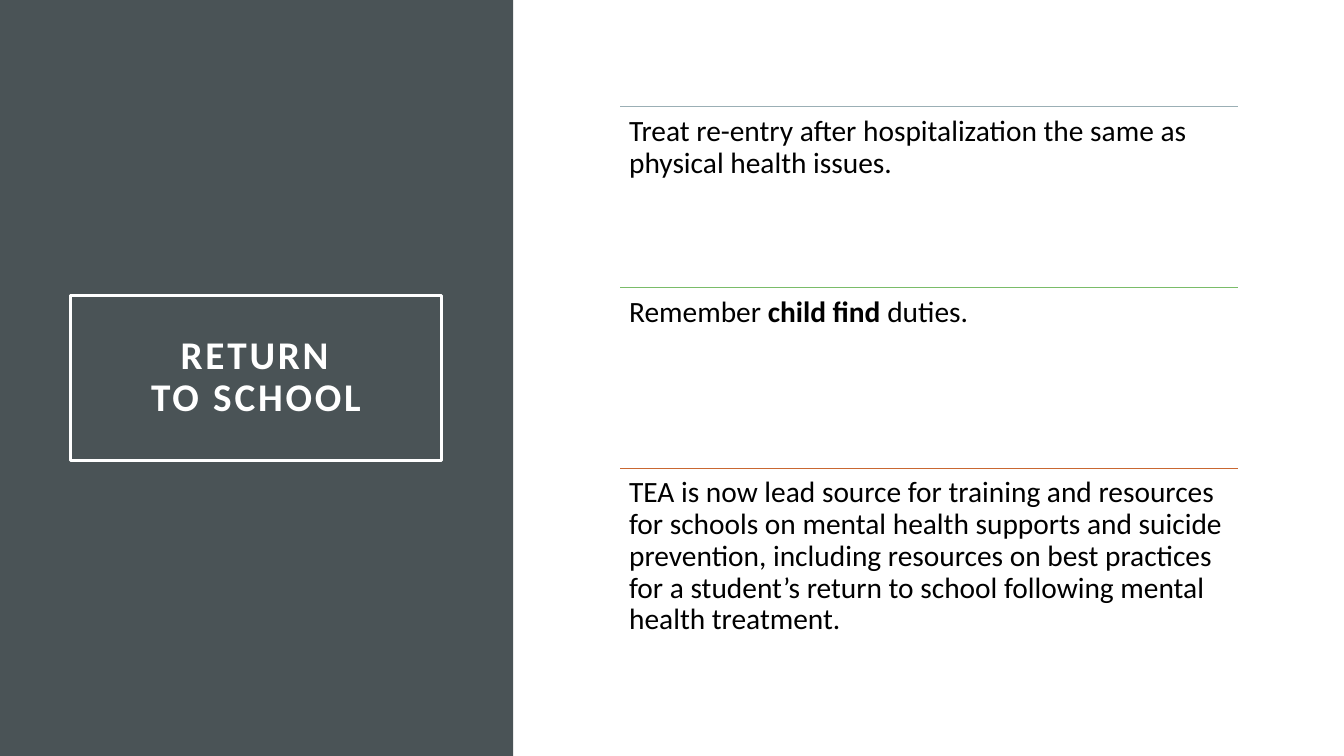
from pptx import Presentation
from pptx.dml.color import RGBColor
from pptx.enum.shapes import MSO_CONNECTOR as Connector, MSO_SHAPE as Shape
from pptx.enum.text import MSO_ANCHOR as Anchor, MSO_AUTO_SIZE as AutoSize, PP_ALIGN as Align
from pptx.oxml.ns import qn
from pptx.util import Inches, Pt
from lxml.etree import SubElement

COLORS = {
    "panel": "4A5356",
    "white": "FFFFFF",
    "text": "000000",
    "rules": ["9BAFB5", "7ABC69", "C96731"],
}
TITLE = "RETURN\vTO SCHOOL"
# Each point is a list of (words, bold) spans
POINTS = [
    [("Treat re-entry after hospitalization the same as physical health issues.", False)],
    [("Remember ", False), ("child find ", True), ("duties.", False)],
    [("TEA is now lead source for training and resources for schools on mental "
      "health supports and suicide prevention, including resources on best "
      "practices for a student’s return to school following mental health "
      "treatment.", False)],
]


def rgb(value):
    return RGBColor.from_string(value)


def set_font(font, color, **values):
    for name, value in {"name": "Calibri", **values}.items():
        setattr(font, name, value)
    font.color.rgb = rgb(color)


def set_frame(frame, margin, anchor):
    values = {"word_wrap": True, "auto_size": AutoSize.NONE, "vertical_anchor": anchor}
    for side in ("left", "top", "right", "bottom"):
        values[f"margin_{side}"] = Inches(margin)
    for name, value in values.items():
        setattr(frame, name, value)


def add_title_panel(page, left, top, width, height):
    # Dark panel
    panel = page.shapes.add_shape(
        Shape.RECTANGLE, Inches(left), Inches(top), Inches(width), Inches(height))
    panel.shadow.inherit = False
    panel.fill.solid()
    panel.fill.fore_color.rgb = rgb(COLORS["panel"])
    panel.line.fill.background()

    # Framed title, brought in front of the panel
    title = page.shapes.title
    panel.element.addnext(title.element)
    title.left, title.top = Inches(left + 0.7), Inches(top + 2.93)
    title.width, title.height = Inches(3.68), Inches(1.64)
    title.line.color.rgb = rgb(COLORS["white"])
    title.line.width = Pt(2.5)
    set_frame(title.text_frame, 0.2, Anchor.MIDDLE)
    title.text_frame.text = TITLE
    para = title.text_frame.paragraphs[0]
    para.alignment = Align.CENTER
    para.line_spacing = 0.9
    for span in para.runs:
        set_font(span.font, COLORS["white"], size=Pt(28), bold=True)
        span.font._element.set("spc", "200")


def add_point(page, left, top, width, height, spans, color):
    # Rule above the text
    rule = page.shapes.add_connector(
        Connector.STRAIGHT, Inches(left), Inches(top), Inches(left + width), Inches(top))
    rule.line.color.rgb = rgb(color)
    rule.line.width = Pt(0.5)
    SubElement(rule.element.spPr, qn("a:effectLst"))

    # Text
    box = page.shapes.add_textbox(
        Inches(left), Inches(top), Inches(width), Inches(height))
    set_frame(box.text_frame, 0.09, Anchor.TOP)
    para = box.text_frame.paragraphs[0]
    para.line_spacing = 0.9
    for words, bold in spans:
        span = para.add_run()
        span.text = words
        set_font(span.font, COLORS["text"], size=Pt(21), bold=bold)


def add_points(page, left, top, width, height):
    row = height / len(POINTS)
    for index, (spans, color) in enumerate(zip(POINTS, COLORS["rules"])):
        add_point(page, left, top + index * row, width, row, spans, color)


def main():
    deck = Presentation()
    deck.slide_width, deck.slide_height = Inches(13.33), Inches(7.5)
    page = deck.slides.add_slide(deck.slide_layouts[5])
    add_title_panel(page, 0, 0, 5.09, 7.5)
    add_points(page, 6.15, 1.06, 6.13, 5.38)
    deck.save("out.pptx")


if __name__ == "__main__":
    main()
